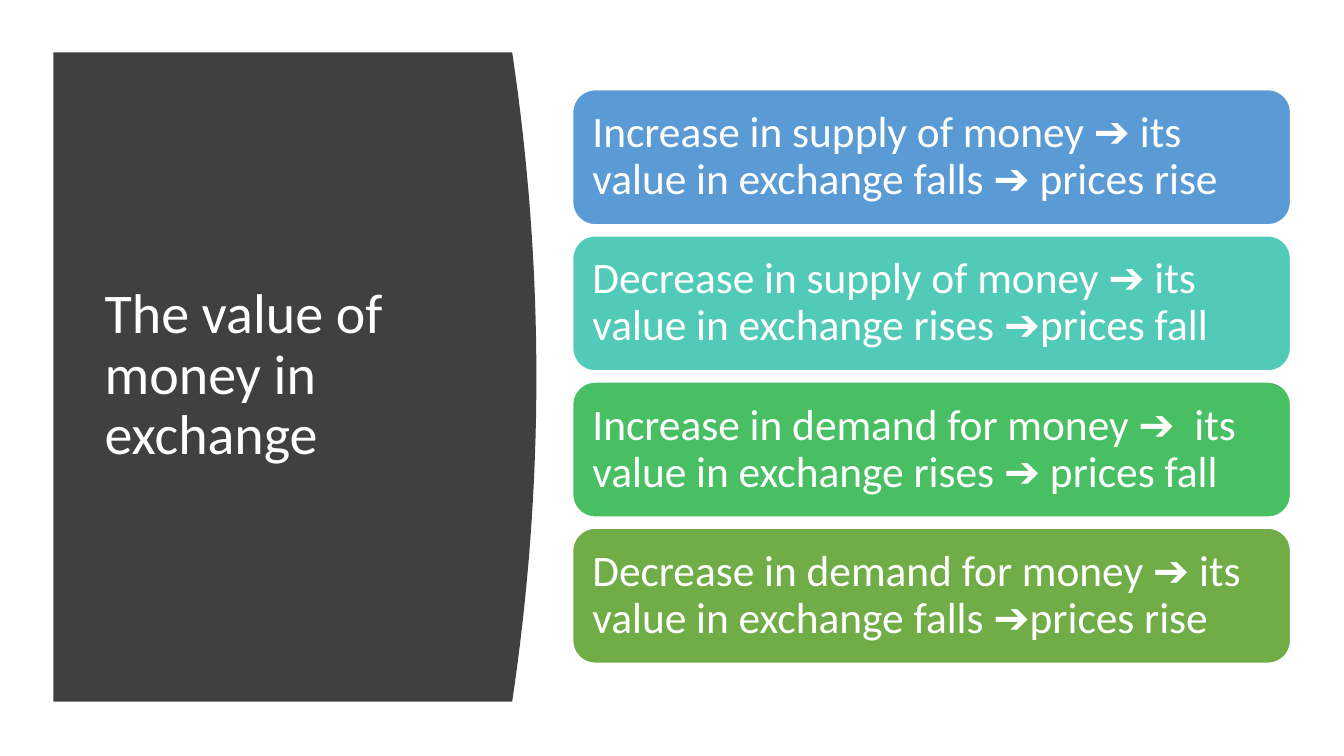
from dataclasses import dataclass

from pptx import Presentation
from pptx.dml.color import RGBColor
from pptx.enum.shapes import MSO_SHAPE
from pptx.enum.text import MSO_ANCHOR, PP_ALIGN
from pptx.util import Inches, Pt

ROUND = MSO_SHAPE.ROUNDED_RECTANGLE
MIDDLE = MSO_ANCHOR.MIDDLE
LEFT = PP_ALIGN.LEFT

WIDE, HIGH = 13.33, 7.5
WHITE, DARK = "FFFFFF", "404040"
STEPS = 32


@dataclass
class Card:
    """One coloured statement in the stack."""
    text: str
    fill: str


@dataclass
class Stack:
    """A column of equal rows, in inches."""
    left: float
    top: float
    width: float
    height: float
    gap: float

    def row(self, index: int) -> tuple:
        """Return the box of one row."""
        top = self.top + index * (self.height + self.gap)
        return tuple(Inches(v) for v in (self.left, top, self.width, self.height))


CARDS = [
    Card("Increase in supply of money ➔ its value in exchange falls ➔ prices rise", "5B9BD5"),
    Card("Decrease in supply of money ➔ its value in exchange rises ➔prices fall", "52CAB8"),
    Card("Increase in demand for money ➔  its value in exchange rises ➔ prices fall", "49BF64"),
    Card("Decrease in demand for money ➔ its value in exchange falls ➔prices rise", "70AD47"),
]
STACK = Stack(left=5.68, top=0.89, width=7.12, height=1.34, gap=0.11)


def color(code: str) -> RGBColor:
    """Turn a hex string into a colour."""
    return RGBColor.from_string(code)


def write(shape, text: str, *, size: float, inset: float, font: str = "Calibri",
          ink: str = WHITE) -> None:
    """Put left-aligned, vertically centred text into a shape."""
    frame = shape.text_frame
    frame.word_wrap = True
    frame.vertical_anchor = MIDDLE
    frame.margin_left = frame.margin_right = Inches(inset)
    frame.margin_top = frame.margin_bottom = Inches(inset)
    para = frame.paragraphs[0]
    para.alignment = LEFT
    para.line_spacing = 0.9
    run = para.add_run()
    run.text = text
    run.font.size = Pt(size)
    run.font.name = font
    run.font.color.rgb = color(ink)


def panel(shapes, left: float, top: float, edge: float, base: float, bulge: float) -> None:
    """Draw the dark panel whose right side bows outward."""
    curve = []
    for step in range(STEPS + 1):
        share = step / STEPS
        across = edge + bulge * (1 - (2 * share - 1) ** 2)
        curve.append((Inches(across), Inches(top + share * (base - top))))
    pen = shapes.build_freeform(Inches(left), Inches(top), scale=1.0)
    pen.add_line_segments(curve + [(Inches(left), Inches(base))], close=True)
    shape = pen.convert_to_shape()
    shape.shadow.inherit = False
    shape.fill.solid()
    shape.fill.fore_color.rgb = color(DARK)
    shape.line.fill.background()


def draw(shapes, card: Card, box: tuple) -> None:
    """Draw one rounded card with its statement."""
    shape = shapes.add_shape(ROUND, *box)
    shape.shadow.inherit = False
    shape.fill.solid()
    shape.fill.fore_color.rgb = color(card.fill)
    shape.line.color.rgb = color(WHITE)
    shape.line.width = Pt(1)
    write(shape, card.text, size=31, inset=0.13)


def main() -> None:
    """Build and save the slide."""
    deck = Presentation()
    deck.slide_width, deck.slide_height = Inches(WIDE), Inches(HIGH)
    shapes = deck.slides.add_slide(deck.slide_layouts[6]).shapes
    panel(shapes, left=0.53, top=0.52, edge=5.08, base=6.96, bulge=0.24)
    title = shapes.add_textbox(Inches(0.94), Inches(1.11), Inches(3.74), Inches(5.24))
    write(title, "The value of money in exchange", size=40, inset=0.1)
    for index, card in enumerate(CARDS):
        draw(shapes, card, STACK.row(index))
    deck.save("out.pptx")


if __name__ == "__main__":
    main()
